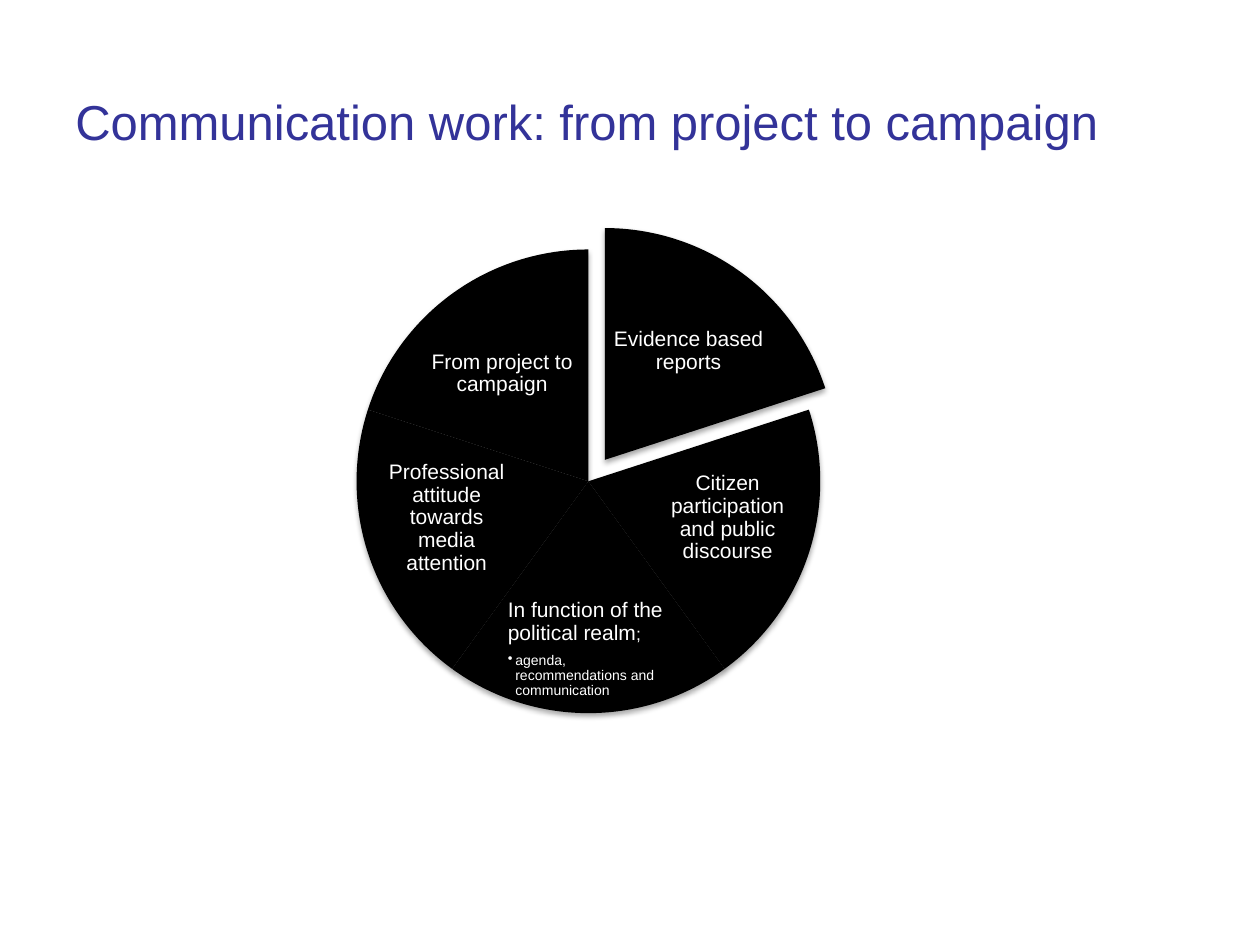
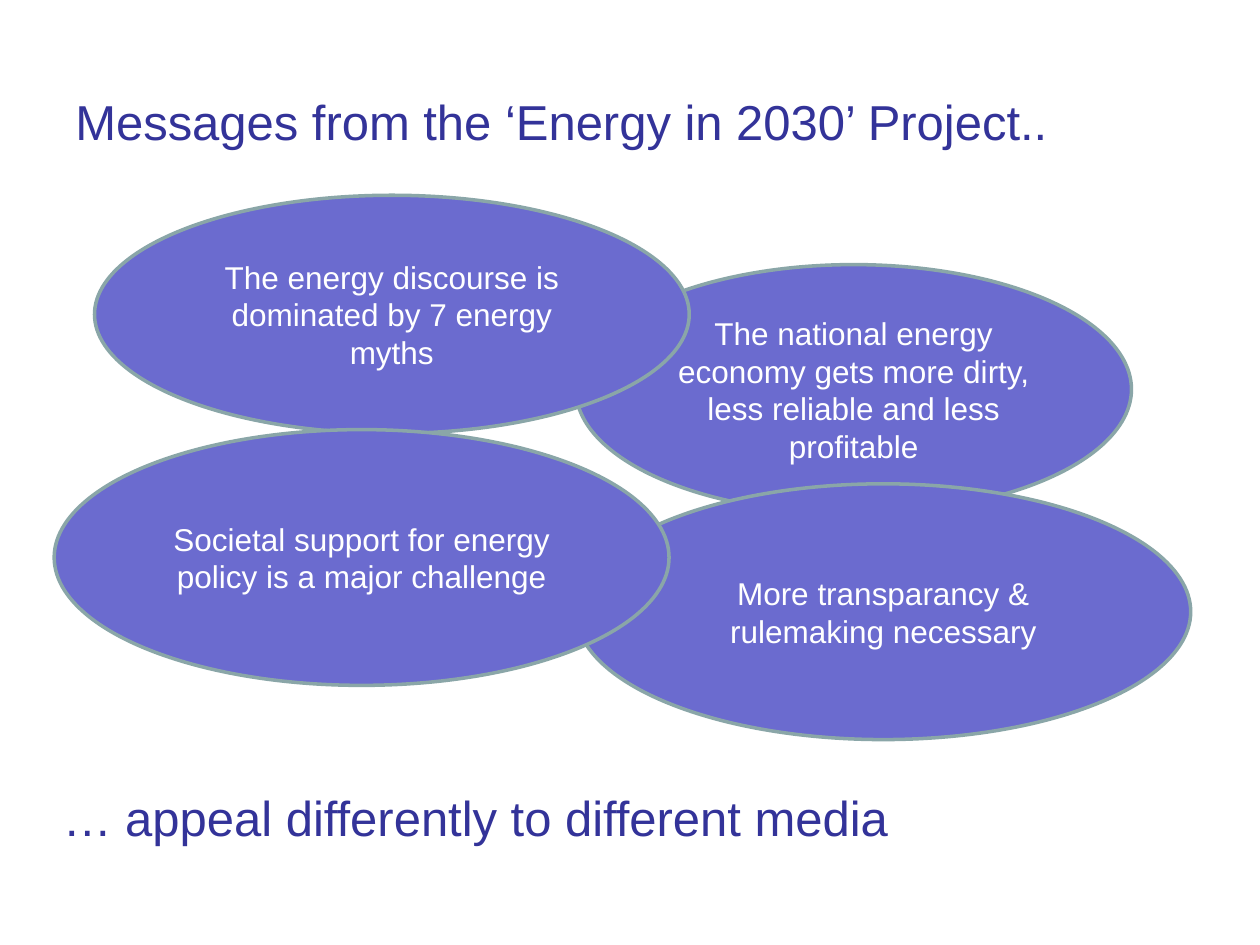
from lxml import etree
from pptx import Presentation
from pptx.dml.color import RGBColor
from pptx.enum.shapes import MSO_SHAPE
from pptx.enum.text import MSO_ANCHOR, PP_ALIGN
from pptx.oxml.ns import qn
from pptx.util import Inches, Pt

PIE, OVAL = MSO_SHAPE.PIE, MSO_SHAPE.OVAL
TOP, MIDDLE = MSO_ANCHOR.TOP, MSO_ANCHOR.MIDDLE
LEFT, CENTER = PP_ALIGN.LEFT, PP_ALIGN.CENTER

THEME = {
    "font": "Arial",
    "title": RGBColor(0x33, 0x33, 0x99),
    "light": RGBColor(0xFF, 0xFF, 0xFF),
    "slice": RGBColor(0x00, 0x00, 0x00),
    "oval": RGBColor(0x6B, 0x6B, 0xCF),
    "outline": RGBColor(0x8A, 0xA6, 0xA8),
    "title_size": 28,
    "oval_size": 18,
    "label_size": 12,
    "mark_size": 10,
    "detail_size": 8,
}
LABEL_FORMAT = {"line_spacing": 0.9, "space_after": Pt(4.8)}
LABEL_FRAME = {side: Inches(0.02) for side in
               ("margin_left", "margin_top", "margin_right", "margin_bottom")}


def write(paragraph, text, size, color, align=LEFT):
    """Add one styled run, so that a paragraph can mix sizes."""
    paragraph.alignment = align
    run = paragraph.add_run()
    run.text = text
    run.font.name = THEME["font"]
    run.font.size = Pt(THEME[size])
    run.font.color.rgb = THEME[color]


def text_area(shapes, box, anchor=TOP):
    frame = shapes.add_textbox(*map(Inches, box)).text_frame
    frame.word_wrap = True
    frame.vertical_anchor = anchor
    return frame


prs = Presentation()
prs.slide_width, prs.slide_height = Inches(10), Inches(7.5)
blank = prs.slide_layouts[6]
campaign, messages = (prs.slides.add_slide(blank) for _ in range(2))

HEADINGS = [
    (campaign, 0.5, 0.68, "Communication work: from project to campaign"),
    (messages, 0.5, 0.68, "Messages from the ‘Energy in 2030’ Project.."),
]
for slide, left, top, heading in HEADINGS:
    frame = text_area(slide.shapes, (left, top, 9, 1.25))
    write(frame.paragraphs[0], heading, "title_size", "title")

# Slide 1: five equal slices, clockwise from the top, the first one pulled out
DIAMETER = 3.68
PIE_CORNER, PULLED_CORNER = (2.83, 1.98), (2.96, 1.81)
SLICES = [
    ("Evidence based reports", (4.84, 2.36, 1.25, 0.85)),
    ("Citizen participation and public discourse", (5.23, 3.65, 1.09, 0.92)),
    ("In function of the political realm", (4.01, 4.74, 1.31, 0.79)),
    ("Professional attitude towards media attention", (3, 3.65, 1.09, 0.92)),
    ("From project to campaign", (3.36, 2.54, 1.25, 0.85)),
]
DETAILS = {2: "agenda, recommendations and communication"}
SWEEP = 360 / len(SLICES)
ANGLE_UNIT = 0.6  # adjustment value per degree

wheel = campaign.shapes.add_group_shape().shapes
for number, (label, label_box) in enumerate(SLICES):
    corner = PIE_CORNER if number else PULLED_CORNER
    piece = wheel.add_shape(PIE, *map(Inches, (*corner, DIAMETER, DIAMETER)))
    start = 270 + number * SWEEP
    for side, angle in enumerate((start, start + SWEEP)):
        piece.adjustments[side] = round(angle % 360 * ANGLE_UNIT, 2)
    piece.fill.solid()
    piece.fill.fore_color.rgb = THEME["slice"]
    piece.line.fill.background()
    piece.shadow.inherit = False
    effects = piece._element.spPr.find(qn("a:effectLst"))
    shadow = etree.SubElement(effects, qn("a:outerShdw"), blurRad=str(Pt(3.1)),
                              dist=str(Pt(1.8)), dir="5400000", rotWithShape="0")
    shade = etree.SubElement(shadow, qn("a:srgbClr"), val=str(THEME["slice"]))
    etree.SubElement(shade, qn("a:alpha"), val="35000")

    detail = DETAILS.get(number)
    frame = text_area(wheel, label_box, TOP if detail else MIDDLE)
    for name, value in LABEL_FRAME.items():
        setattr(frame, name, value)
    caption = frame.paragraphs[0]
    write(caption, label, "label_size", "light", LEFT if detail else CENTER)
    if detail:
        write(caption, ";", "mark_size", "light")
        point = frame.add_paragraph()
        point.level = 1
        properties = point._p.get_or_add_pPr()
        properties.set("marL", str(Inches(0.06)))
        properties.set("indent", str(Inches(-0.06)))
        etree.SubElement(properties, qn("a:buChar"), char="•")
        write(point, detail, "detail_size", "light")
    for paragraph in frame.paragraphs:
        for name, value in LABEL_FORMAT.items():
            setattr(paragraph, name, value)

# Slide 2: overlapping messages, from back to front
MESSAGES = [
    ("The national energy economy gets more dirty, less reliable and less profitable",
     (4.57, 2.1, 4.41, 1.98)),
    ("The energy discourse is dominated by 7 energy myths", (0.75, 1.55, 4.72, 1.89)),
    ("More transparancy & rulemaking necessary", (4.57, 3.84, 4.88, 2.03)),
    ("Societal support for energy policy is a major challenge", (0.43, 3.41, 4.88, 2.03)),
]
for message, box in MESSAGES:
    bubble = messages.shapes.add_shape(OVAL, *map(Inches, box))
    bubble.shadow.inherit = False
    bubble.fill.solid()
    bubble.fill.fore_color.rgb = THEME["oval"]
    bubble.line.color.rgb = THEME["outline"]
    bubble.line.width = Pt(2)
    bubble.text_frame.word_wrap = True
    bubble.text_frame.vertical_anchor = MIDDLE
    write(bubble.text_frame.paragraphs[0], message, "oval_size", "light", CENTER)

closing = text_area(messages.shapes, (0.4, 6.2, 9, 1.25))
write(closing.paragraphs[0], "… appeal differently to different media", "title_size", "title")

prs.save("out.pptx")
